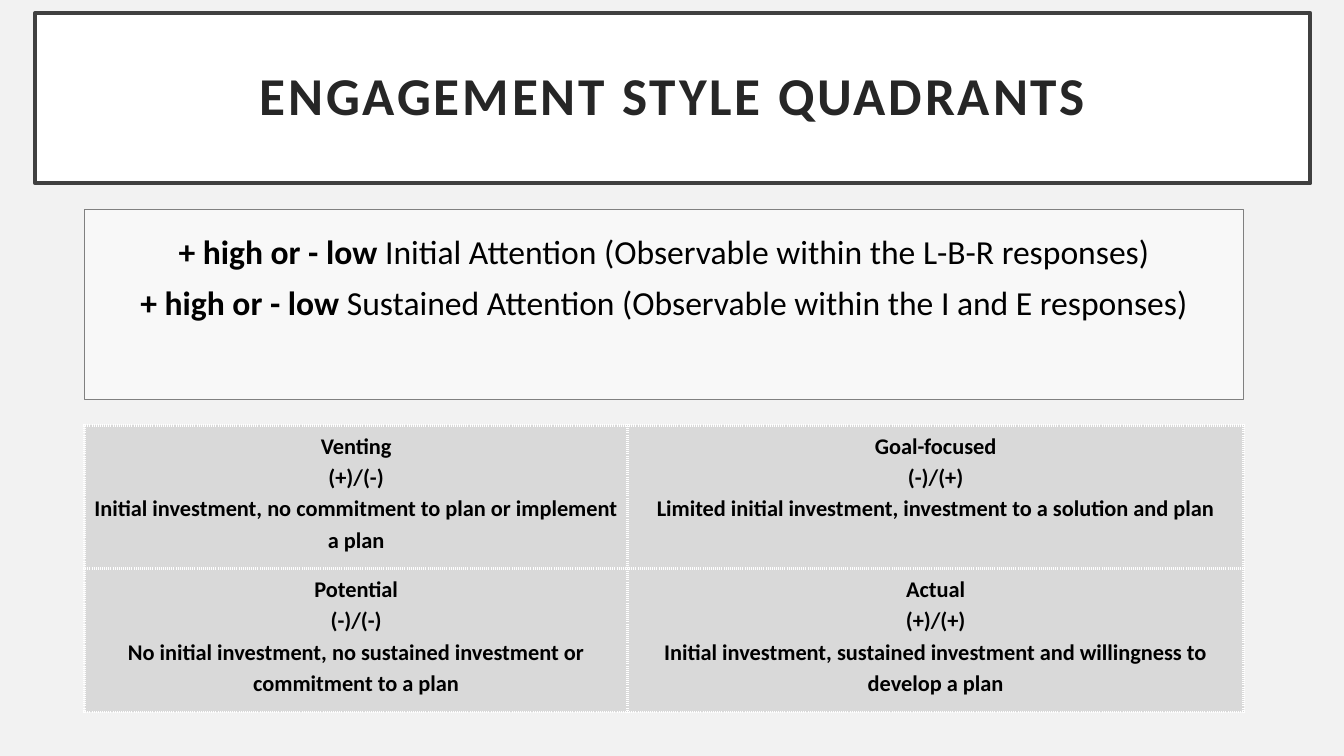
from dataclasses import dataclass

from lxml import etree
from pptx import Presentation
from pptx import util as u
from pptx.dml.color import RGBColor
from pptx.enum import shapes, text
from pptx.oxml import ns


@dataclass(frozen=True)
class Theme:
    font: str = "Calibri"
    background: str = "F2F2F2"
    white: str = "FFFFFF"
    title_ink: str = "262626"
    title_line: str = "404040"
    ink: str = "000000"
    key_line: str = "808080"
    cell: str = "D9D9D9"
    title_size: int = 38
    key_size: int = 24
    cell_size: int = 16


THEME = Theme()

KEY_LINES = [
    ("+ high or - low ", "Initial Attention (Observable within the L-B-R responses)"),
    ("+ high or - low ", "Sustained Attention (Observable within the I and E responses)"),
]
QUADRANTS = [
    [
        ("Venting", "(+)/(-)", "Initial investment, no commitment to plan or implement a plan"),
        ("Goal-focused", "(-)/(+)", "Limited initial investment, investment to a solution and plan"),
    ],
    [
        ("Potential", "(-)/(-)",
         "No initial investment, no sustained investment or commitment to a plan"),
        ("Actual", "(+)/(+)",
         "Initial investment, sustained investment and willingness to develop a plan"),
    ],
]


def rgb(color):
    return RGBColor.from_string(color)


def set_fill(fill, color, opacity=100):
    fill.solid()
    fill.fore_color.rgb = rgb(color)
    if opacity < 100:
        srgb = fill._xPr.find(".//" + ns.qn("a:srgbClr"))
        etree.SubElement(srgb, ns.qn("a:alpha"), val=str(opacity * 1000))


def set_line(line, color, width):
    line.color.rgb = rgb(color)
    line.width = u.Pt(width)


def set_margins(box, left, top, right, bottom):
    box.margin_left, box.margin_top = u.Cm(left), u.Cm(top)
    box.margin_right, box.margin_bottom = u.Cm(right), u.Cm(bottom)


def add_run(p, words, size, color, bold=False):
    r = p.add_run()
    r.text = words
    r.font.name = THEME.font
    r.font.size = u.Pt(size)
    r.font.color.rgb = rgb(color)
    r.font.bold = bold
    return r


def add_paragraph(tf, index, spacing, before=0):
    """Return a centred paragraph, reusing the frame's first one."""
    p = tf.add_paragraph() if index else tf.paragraphs[0]
    p.alignment = text.PP_ALIGN.CENTER
    p.line_spacing = spacing
    p.space_before = u.Pt(before)
    return p


def format_title(title, words):
    title.left, title.top = u.Cm(0.89), u.Cm(0.33)
    title.width, title.height = u.Cm(32.13), u.Cm(4.29)
    set_fill(title.fill, THEME.white)
    set_line(title.line, THEME.title_line, 3)
    tf = title.text_frame
    tf.word_wrap = True
    tf.auto_size = text.MSO_AUTO_SIZE.NONE
    tf.vertical_anchor = text.MSO_ANCHOR.MIDDLE
    set_margins(tf, 0.76, 0.51, 0.76, 0.51)
    p = add_paragraph(tf, 0, 0.9)
    r = add_run(p, words, THEME.title_size, THEME.title_ink, bold=True)
    r.font._element.set("spc", "200")


def add_key(slide, lines):
    sp = slide.shapes.add_shape(
        shapes.MSO_SHAPE.RECTANGLE, u.Cm(2.13), u.Cm(5.28), u.Cm(29.21), u.Cm(4.78))
    sp.shadow.inherit = False
    set_fill(sp.fill, THEME.white, opacity=50)
    set_line(sp.line, THEME.key_line, 0.75)
    tf = sp.text_frame
    tf.word_wrap = True
    tf.vertical_anchor = text.MSO_ANCHOR.MIDDLE
    set_margins(tf, 0.25, 0.13, 0.25, 1.41)
    for i, (levels, meaning) in enumerate(lines):
        p = add_paragraph(tf, i, 0.9, before=10)
        add_run(p, levels, THEME.key_size, THEME.ink, bold=True)
        add_run(p, meaning, THEME.key_size, THEME.ink)


def add_borders(cell, color, width):
    tc_pr = cell._tc.get_or_add_tcPr()
    for side in ("lnL", "lnR", "lnT", "lnB"):
        ln = etree.SubElement(tc_pr, ns.qn(f"a:{side}"), w=str(u.Pt(width)))
        fill = etree.SubElement(ln, ns.qn("a:solidFill"))
        etree.SubElement(fill, ns.qn("a:srgbClr"), val=color)
        etree.SubElement(ln, ns.qn("a:prstDash"), val="sysDot")


def fill_cell(cell, lines):
    add_borders(cell, THEME.white, 2.25)
    set_fill(cell.fill, THEME.cell, opacity=65)
    set_margins(cell, 0.1, 0.08, 0.1, 0.08)
    for i, words in enumerate(lines):
        p = add_paragraph(cell.text_frame, i, 1.15)
        add_run(p, words, THEME.cell_size, THEME.ink, bold=True)


def add_quadrants(slide, quadrants):
    table = slide.shapes.add_table(
        2, 2, u.Cm(2.13), u.Cm(10.72), u.Cm(29.21), u.Cm(7.22)).table
    for column, width in zip(table.columns, (13.69, 15.52)):
        column.width = u.Cm(width)
    for i, row in enumerate(quadrants):
        for j, lines in enumerate(row):
            fill_cell(table.cell(i, j), lines)


def main():
    prs = Presentation()
    prs.slide_width, prs.slide_height = u.Cm(33.87), u.Cm(19.05)
    slide = prs.slides.add_slide(prs.slide_layouts[0])
    set_fill(slide.background.fill, THEME.background)
    subtitle = slide.placeholders[1].element
    subtitle.getparent().remove(subtitle)
    format_title(slide.shapes.title, "ENGAGEMENT STYLE QUADRANTS")
    add_key(slide, KEY_LINES)
    add_quadrants(slide, QUADRANTS)
    prs.save("out.pptx")


if __name__ == "__main__":
    main()
